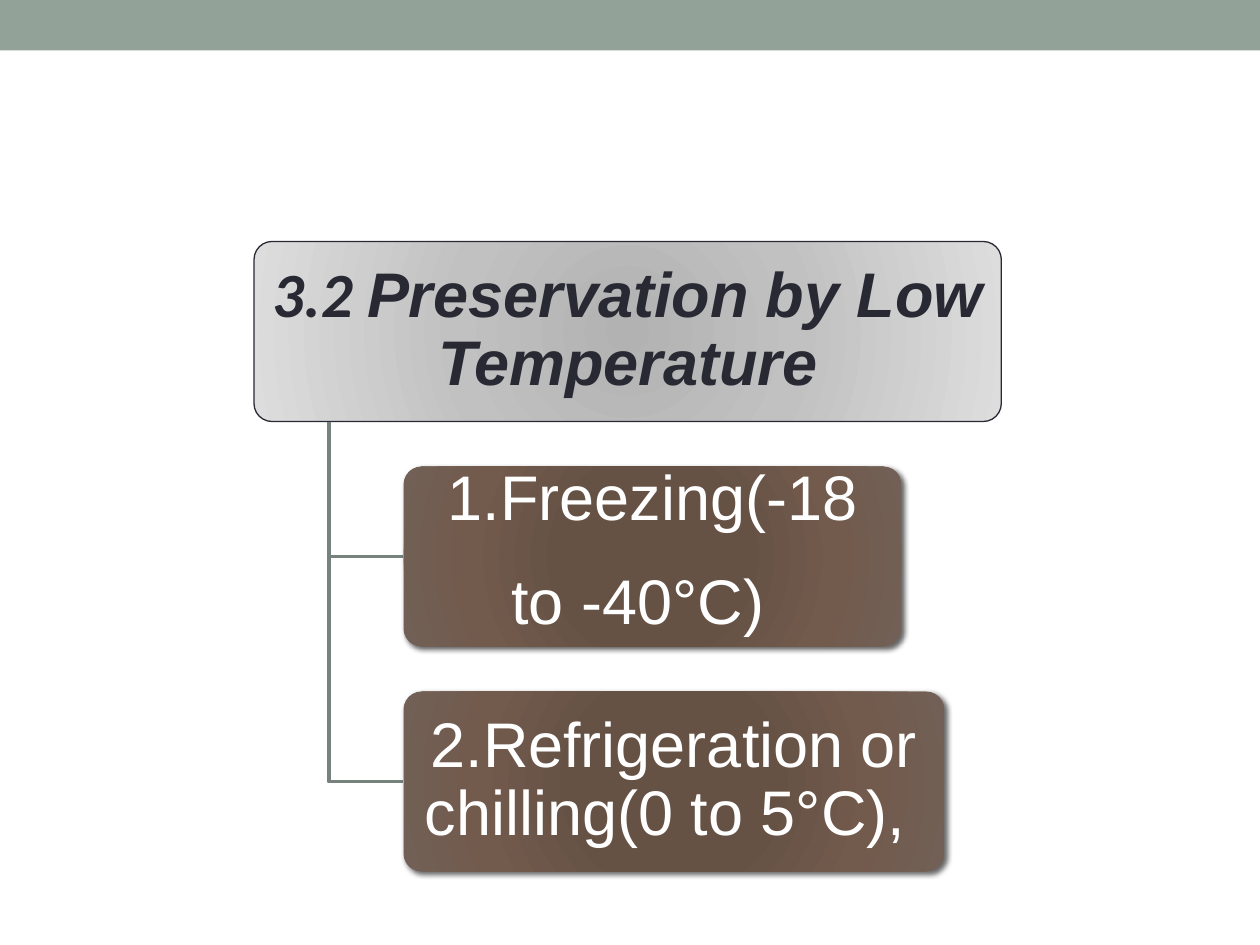
from pptx import Presentation
from pptx.dml.color import RGBColor
from pptx.enum.shapes import MSO_SHAPE
from pptx.enum.text import MSO_ANCHOR, PP_ALIGN
from pptx.oxml import parse_xml
from pptx.oxml.ns import nsdecls, qn
from pptx.util import Pt

RECT, ROUND = MSO_SHAPE.RECTANGLE, MSO_SHAPE.ROUNDED_RECTANGLE
MIDDLE, CENTER = MSO_ANCHOR.MIDDLE, PP_ALIGN.CENTER

INK, WHITE, SAGE, SLATE = "292934", "FFFFFF", "93A299", "76827B"
GREY = [(0, "B2B2B3"), (45, "C1C1C2"), (100, "DDDDDE")]
BROWN = [(0, "685044"), (34, "665145"), (70, "725A4D"), (100, "726056")]

# Each run is text, size, font
HEAD = [("3.2 ", 36, "Calibri"),
        ("Preservation by Low Temperature", 36, "Arial")]
ITEMS = [
    (284.5, [("1.Freezing(-18 to -40°C)", 36, "Arial"), (" ", 60, "Arial")]),
    (309, [("2.Refrigeration or chilling(0 to 5°C), ", 36, "Arial")]),
]


def color(code):
    return RGBColor.from_string(code)


def glow(shape, stops):
    """Fill a shape with a round gradient."""
    shape.fill.gradient()
    props = shape._element.spPr
    marks = "".join(
        f'<a:gs pos="{at * 1000}"><a:srgbClr val="{code}"/></a:gs>'
        for at, code in stops)
    props.replace(props.find(qn("a:gradFill")), parse_xml(
        f'<a:gradFill {nsdecls("a")} rotWithShape="1"><a:gsLst>{marks}</a:gsLst>'
        '<a:path path="circle"><a:fillToRect l="100000" t="100000" '
        'r="100000" b="100000"/></a:path></a:gradFill>'))


def shade(shape):
    """Cast a soft shadow to the lower right."""
    effects = shape._element.spPr.find(qn("a:effectLst"))
    effects.append(parse_xml(
        f'<a:outerShdw {nsdecls("a")} blurRad="{Pt(3)}" dist="{Pt(2)}" '
        'dir="2700000" algn="tl" rotWithShape="0"><a:srgbClr val="000000">'
        '<a:alpha val="60000"/></a:srgbClr></a:outerShdw>'))


def add_band(slide, left, top, width, height):
    band = slide.shapes.add_shape(RECT, Pt(left), Pt(top), Pt(width), Pt(height))
    band.shadow.inherit = False
    band.fill.solid()
    band.fill.fore_color.rgb = color(SAGE)
    band.line.fill.background()


def add_card(slide, left, top, width, height, runs, stops, ink, head=False):
    card = slide.shapes.add_shape(ROUND, Pt(left), Pt(top), Pt(width), Pt(height))
    card.adjustments[0] = 0.1
    card.shadow.inherit = False
    glow(card, stops)
    if head:
        card.line.color.rgb = color(ink)
        card.line.width = Pt(0.75)
    else:
        card.line.fill.background()
        shade(card)

    # Text
    frame = card.text_frame
    frame.word_wrap = True
    frame.vertical_anchor = MIDDLE
    frame.margin_left = frame.margin_right = Pt(5)
    frame.margin_top = frame.margin_bottom = Pt(3.5)
    para = frame.paragraphs[0]
    para.alignment = CENTER
    para.line_spacing = 0.9
    for text, size, face in runs:
        run = para.add_run()
        run.text = text
        font = run.font
        font.size, font.name = Pt(size), face
        font.bold = font.italic = head
        font.color.rgb = color(ink)


def add_elbow(slide, left, top, width, height):
    path = slide.shapes.build_freeform(Pt(left), Pt(top))
    path.add_line_segments([(Pt(left), Pt(top + height)),
                            (Pt(left + width), Pt(top + height))], close=False)
    elbow = path.convert_to_shape()
    elbow.shadow.inherit = False
    elbow.fill.background()
    elbow.line.color.rgb = color(SLATE)
    elbow.line.width = Pt(2.08)


def add_tree(slide, left, top, width, height):
    """Heading card with item cards hung below it, a quarter card apart."""
    row = height / (1 + 1.25 * len(ITEMS))
    step = width / 10
    add_card(slide, left, top, width, row, HEAD, GREY, INK, head=True)
    for i, (wide, runs) in enumerate(ITEMS, 1):
        y = top + i * 1.25 * row
        add_elbow(slide, left + step, top + row, step, y - top - row / 2)
        add_card(slide, left + 2 * step, y, wide, row, runs, BROWN, WHITE)


def main():
    deck = Presentation()
    deck.slide_width, deck.slide_height = Pt(720), Pt(540)
    slide = deck.slides.add_slide(deck.slide_layouts[6])
    add_band(slide, 0, 0, 720, 28.8)
    add_tree(slide, 145.2, 138, 427, 360)
    deck.save("out.pptx")


if __name__ == "__main__":
    main()
